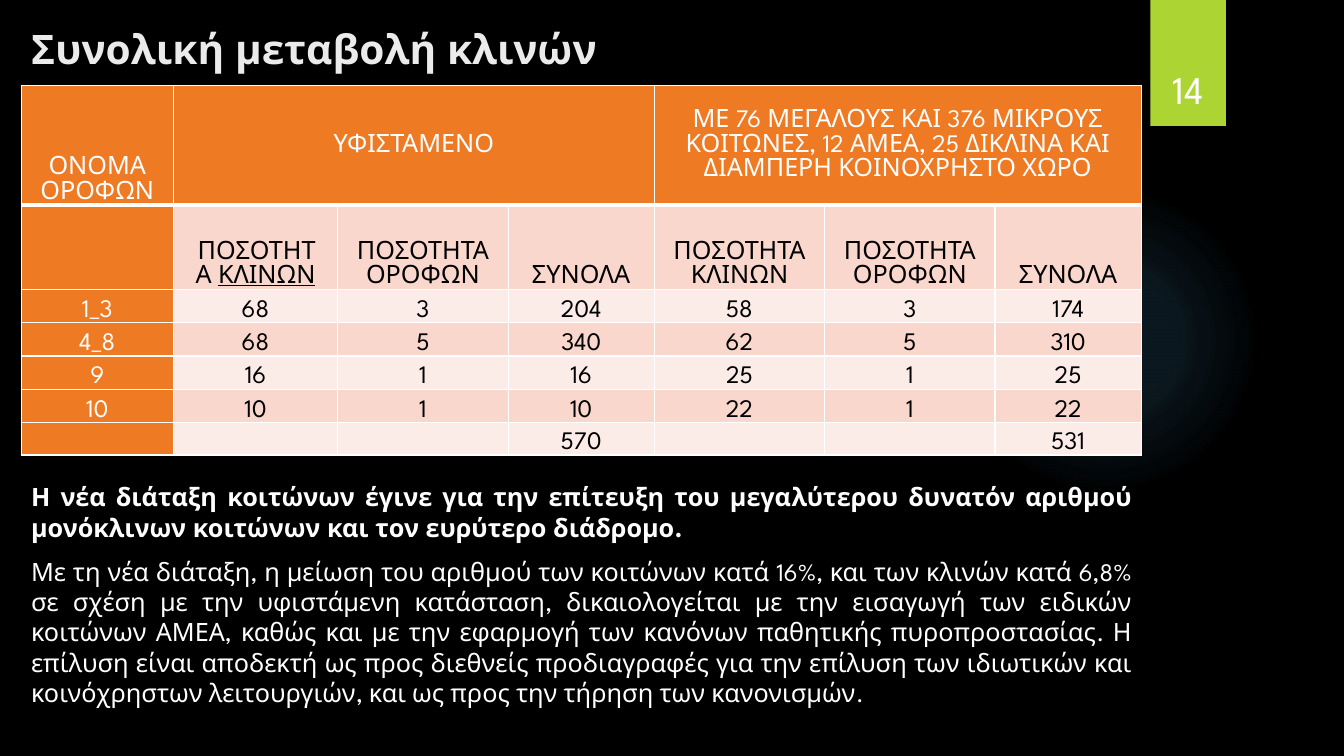
from pptx import Presentation
from pptx.dml.color import RGBColor
from pptx.enum.shapes import MSO_SHAPE as Shape
from pptx.enum.text import MSO_ANCHOR as Anchor, PP_ALIGN as Align
from pptx.oxml import parse_xml
from pptx.oxml.ns import nsdecls
from pptx.util import Inches, Pt

COLORS = {"black": "000000", "white": "FFFFFF", "title": "EBEBEB", "green": "ACD433",
          "orange": "EF7A24", "rose": "F9D7CD", "pale": "FCECE8",
          "light glow": "7AC4F0", "deep glow": "38A6E9"}
FONT = "League Spartan"


def color(name):
    return RGBColor.from_string(COLORS[name])


def add_span(para, text, size=18, ink="white", bold=False, underline=None):
    span = para.add_run()
    span.text = text
    span.font.name, span.font.size = FONT, Pt(size)
    span.font.bold, span.font.underline = bold, underline
    span.font.color.rgb = color(ink)


deck = Presentation()
deck.slide_width, deck.slide_height = Inches(13.33), Inches(7.5)
page = deck.slides.add_slide(deck.slide_layouts[5])
page.background.fill.solid()
page.background.fill.fore_color.rgb = color("black")

# Soft glow behind the table
for glow in ("light glow", "deep glow"):
    disc = page.shapes.add_shape(Shape.OVAL, Inches(9.41), Inches(1.83), Inches(3.08), Inches(3.08))
    disc.shadow.inherit = False
    disc.line.fill.background()
    stops = "".join(
        f'<a:gs pos="{place * 1000}"><a:srgbClr val="{COLORS[glow]}">'
        f'<a:alpha val="{alpha * 1000}"/></a:srgbClr></a:gs>'
        for place, alpha in ((0, 7), (36, 6), (69, 0)))
    disc.element.spPr.find("{*}prstGeom").addnext(parse_xml(
        f'<a:gradFill {nsdecls("a")}><a:gsLst>{stops}</a:gsLst><a:path path="circle">'
        '<a:fillToRect l="50000" t="50000" r="50000" b="50000"/></a:path></a:gradFill>'))

# Page number tab
tab = page.shapes.add_shape(Shape.RECTANGLE, Inches(11.41), 0, Inches(0.75), Inches(1.25))
tab.shadow.inherit = False
tab.fill.solid()
tab.fill.fore_color.rgb = color("green")
tab.line.fill.background()
tab.element.spPr.find("{*}effectLst").append(parse_xml(
    f'<a:outerShdw {nsdecls("a")} blurRad="{Pt(3)}" dist="{Pt(2)}" dir="5400000" rotWithShape="0">'
    f'<a:srgbClr val="{COLORS["black"]}"><a:alpha val="45000"/></a:srgbClr></a:outerShdw>'))
number = page.shapes.add_textbox(Inches(11.32), Inches(0.32), Inches(0.92), Inches(0.84)).text_frame
number.word_wrap = True
number.vertical_anchor = Anchor.BOTTOM
number.paragraphs[0].alignment = Align.CENTER
add_span(number.paragraphs[0], "14", size=28)

# Title
title = page.shapes.title
title.left, title.top, title.width, title.height = Inches(0.21), Inches(0.24), Inches(11.12), Inches(1.53)
title.text_frame.vertical_anchor = Anchor.TOP
title_para = title.text_frame.paragraphs[0]
title_para.alignment = Align.LEFT
title_para.line_spacing = 0.9
add_span(title_para, "Συνολική μεταβολή κλινών", size=29, ink="title", bold=True)

# Explanation
body = page.shapes.add_textbox(Inches(0.21), Inches(4.73), Inches(11.12), Inches(2.45)).text_frame
body.word_wrap = True
statements = [
    ("Η νέα διάταξη κοιτώνων έγινε για την επίτευξη του μεγαλύτερου δυνατόν αριθμού "
     "μονόκλινων κοιτώνων και τον ευρύτερο διάδρομο. ", True),
    ("Με τη νέα διάταξη, η μείωση του αριθμού των κοιτώνων κατά 16%, και των κλινών κατά 6,8% "
     "σε σχέση με την υφιστάμενη κατάσταση, δικαιολογείται με την εισαγωγή των ειδικών κοιτώνων "
     "ΑΜΕΑ, καθώς και με την εφαρμογή των κανόνων παθητικής πυροπροστασίας. Η επίλυση είναι "
     "αποδεκτή ως προς διεθνείς προδιαγραφές για την επίλυση των ιδιωτικών και κοινόχρηστων "
     "λειτουργιών, και ως προς την τήρηση των κανονισμών. ", False),
]
for index, (text, bold) in enumerate(statements):
    para = body.add_paragraph() if index else body.paragraphs[0]
    para.alignment = Align.JUSTIFY
    para.space_before, para.space_after = Pt(5 if index else 0), Pt(5)
    add_span(para, text, bold=bold)

# Bed table
BEDS, FLOORS, TOTAL = "ΠΟΣΟΤΗΤΑ ΚΛΙΝΩΝ", "ΠΟΣΟΤΗΤΑ ΟΡΟΦΩΝ", "ΣΥΝΟΛΑ"
rows = [
    ["ΟΝΟΜΑ ΟΡΟΦΩΝ", "ΥΦΙΣΤΑΜΕΝΟ", "", "",
     "ΜΕ 76 ΜΕΓΑΛΟΥΣ ΚΑΙ 376 ΜΙΚΡΟΥΣ ΚΟΙΤΩΝΕΣ, 12 ΑΜΕΑ, 25 ΔΙΚΛΙΝΑ ΚΑΙ "
     "ΔΙΑΜΠΕΡΗ ΚΟΙΝΟΧΡΗΣΤΟ ΧΩΡΟ", "", ""],
    ["", BEDS, FLOORS, TOTAL, BEDS, FLOORS, TOTAL],
    ["1_3", "68", "3", "204", "58", "3", "174"],
    ["4_8", "68", "5", "340", "62", "5", "310"],
    ["9", "16", "1", "16", "25", "1", "25"],
    ["10", "10", "1", "10", "22", "1", "22"],
    ["", "", "", "570", "", "", "531"],
]
widths = [1.51, 1.63, 1.69, 1.45, 1.69, 1.69, 1.45]
heights = [0.97, 0.84, 0.33, 0.33, 0.33, 0.33, 0.31]
table = page.shapes.add_table(len(rows), len(widths), Inches(0.21), Inches(0.85),
                              Inches(sum(widths)), Inches(sum(heights))).table
for column, width in zip(table.columns, widths):
    column.width = Inches(width)
for line, height in zip(table.rows, heights):
    line.height = Inches(height)
for first in (1, 4):
    table.cell(0, first).merge(table.cell(0, first + 2))

for r, values in enumerate(rows):
    for c, text in enumerate(values):
        cell = table.cell(r, c)
        heading = r == 0 or c == 0
        group = r == 0 and c > 0
        cell.vertical_anchor = Anchor.MIDDLE if group else Anchor.BOTTOM
        cell.margin_left = cell.margin_right = Inches(0.22 if group else 0.17)
        cell.margin_top = cell.margin_bottom = Inches(0.11 if group else 0)
        cell.fill.solid()
        cell.fill.fore_color.rgb = color("orange" if heading else "rose" if r % 2 else "pale")
        for place, side in enumerate(("lnL", "lnR", "lnT", "lnB")):
            weight = 3 if r == 0 and side == "lnB" else 1
            cell._tc.get_or_add_tcPr().insert(place, parse_xml(
                f'<a:{side} {nsdecls("a")} w="{Pt(weight)}"><a:solidFill>'
                f'<a:srgbClr val="{COLORS["white"]}"/></a:solidFill></a:{side}>'))
        if not text:
            continue
        para = cell.text_frame.paragraphs[0]
        para.alignment = Align.CENTER
        para.line_spacing, para.space_after = 1.07, Pt(6)
        ink = "white" if heading else "black"
        if (r, c) == (1, 1):
            add_span(para, "ΠΟΣΟΤΗΤΑ ", ink=ink)
            add_span(para, "ΚΛΙΝΩΝ", ink=ink, underline=True)
        else:
            add_span(para, text, ink=ink)

deck.save("out.pptx")
